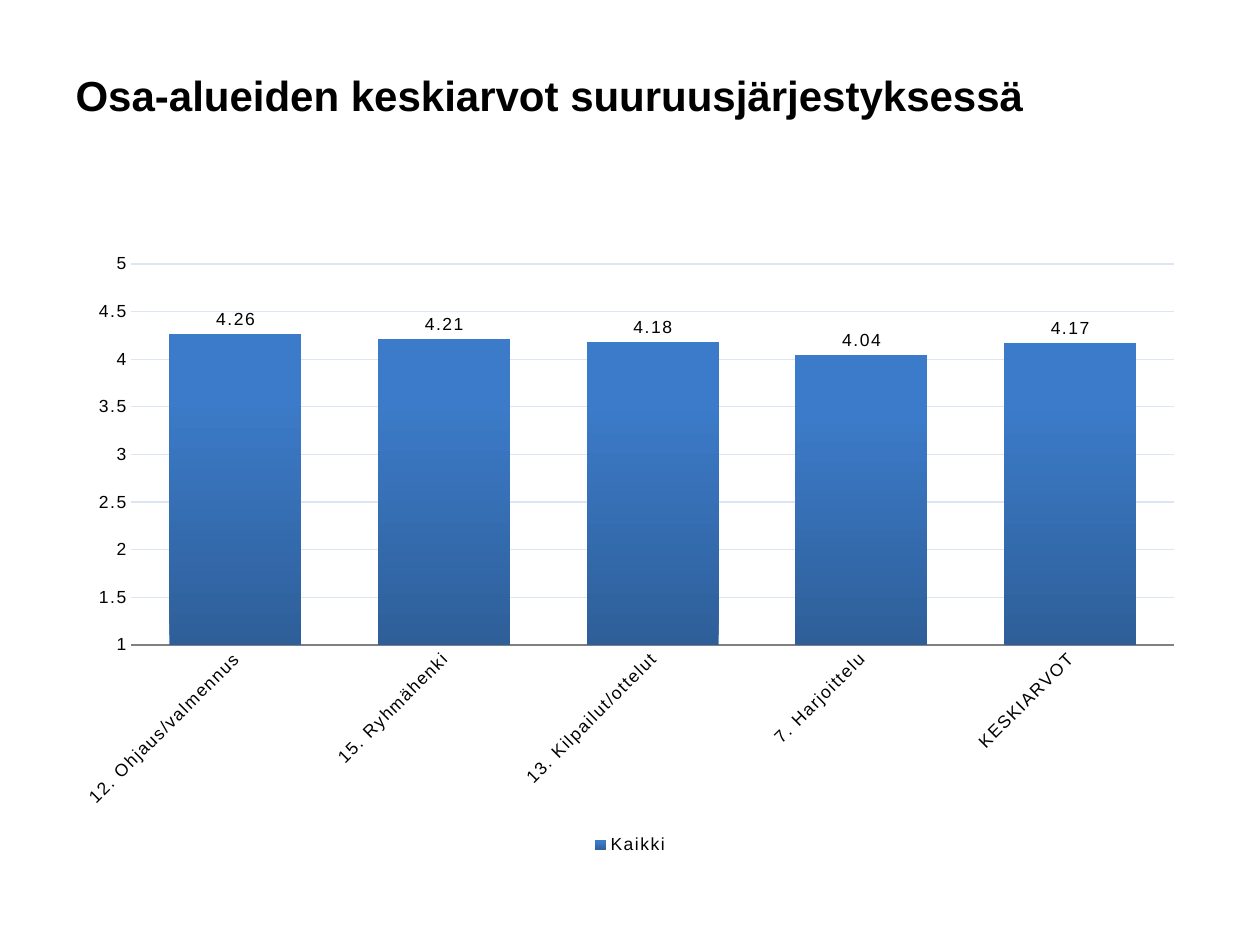
import dataclasses

import lxml.etree
import pptx
import pptx.chart.data
import pptx.dml.color
import pptx.enum.chart
import pptx.enum.text
import pptx.oxml
import pptx.oxml.ns
import pptx.util

BLACK = pptx.dml.color.RGBColor(0x00, 0x00, 0x00)
BAR_BOTTOM = pptx.dml.color.RGBColor(0x2E, 0x5F, 0x99)
BAR_TOP = pptx.dml.color.RGBColor(0x3C, 0x7B, 0xC9)
GRID = pptx.dml.color.RGBColor(0xDC, 0xE6, 0xF2)
BASELINE = pptx.dml.color.RGBColor(0x80, 0x80, 0x80)

SLIDE_WIDTH = pptx.util.Inches(10)
SLIDE_HEIGHT = pptx.util.Inches(7.5)
FONT = "Arial"


@dataclasses.dataclass(frozen=True)
class Area:
    """A rectangle in shares of its container."""
    left: float
    top: float
    width: float
    height: float

    def on_slide(self) -> tuple[int, int, int, int]:
        return (int(self.left * SLIDE_WIDTH), int(self.top * SLIDE_HEIGHT),
                int(self.width * SLIDE_WIDTH), int(self.height * SLIDE_HEIGHT))


@dataclasses.dataclass(frozen=True)
class Score:
    section: str
    average: float


TITLE_AREA = Area(0.05, 0.05, 0.9, 0.1)
CHART_AREA = Area(0.05, 0.26, 0.9, 0.65)
PLOT_AREA = Area(0.06, 0.03, 0.92, 0.62)

SCORES = (
    Score("12. Ohjaus/valmennus", 4.26),
    Score("15. Ryhmähenki", 4.21),
    Score("13. Kilpailut/ottelut", 4.18),
    Score("7. Harjoittelu", 4.04),
    Score("KESKIARVOT", 4.17),
)


def format_font(font, size: float, bold: bool = False) -> None:
    font.name = FONT
    font.size = pptx.util.Pt(size)
    font.bold = bold
    font.color.rgb = BLACK


def add_title(slide) -> None:
    title = slide.shapes.title
    title.left, title.top, title.width, title.height = TITLE_AREA.on_slide()
    frame = title.text_frame
    frame.text = "Osa-alueiden keskiarvot suuruusjärjestyksessä"
    frame.word_wrap = True
    frame.vertical_anchor = pptx.enum.text.MSO_ANCHOR.MIDDLE
    paragraph = frame.paragraphs[0]
    paragraph.alignment = pptx.enum.text.PP_ALIGN.LEFT
    format_font(paragraph.runs[0].font, 24, bold=True)


def place_plot(chart, area: Area) -> None:
    """Fix the inner plot area in shares of the chart."""
    qn = pptx.oxml.ns.qn
    plot_area = chart.plots[0]._element.getparent()
    for old in plot_area.findall(qn("c:layout")):
        plot_area.remove(old)
    layout = pptx.oxml.parse_xml(f"<c:layout {pptx.oxml.ns.nsdecls('c')}/>")
    plot_area.insert(0, layout)
    manual = lxml.etree.SubElement(layout, qn("c:manualLayout"))
    settings = (("layoutTarget", "inner"), ("xMode", "edge"), ("yMode", "edge"),
                ("x", area.left), ("y", area.top), ("w", area.width), ("h", area.height))
    for tag, value in settings:
        lxml.etree.SubElement(manual, qn(f"c:{tag}")).set("val", str(value))


def format_axes(chart) -> None:
    for axis in (chart.category_axis, chart.value_axis):
        axis.major_tick_mark = pptx.enum.chart.XL_TICK_MARK.NONE
        axis.minor_tick_mark = pptx.enum.chart.XL_TICK_MARK.NONE
        format_font(axis.tick_labels.font, 10)

    sections = chart.category_axis
    sections.format.line.color.rgb = BASELINE
    sections.format.line.width = pptx.util.Pt(1)
    labels_body = sections._element.find(".//" + pptx.oxml.ns.qn("a:bodyPr"))
    labels_body.set("rot", str(-45 * 60000))
    labels_body.set("vert", "horz")

    averages = chart.value_axis
    averages.minimum_scale, averages.maximum_scale = 1, 5
    averages.major_unit = 0.5
    averages.format.line.fill.background()
    averages.major_gridlines.format.line.color.rgb = GRID
    averages.major_gridlines.format.line.width = pptx.util.Pt(0.75)


def format_bars(chart) -> None:
    plot = chart.plots[0]
    plot.gap_width = 58
    plot.vary_by_categories = False
    bars = plot.series[0]
    bars.invert_if_negative = False
    fill = bars.format.fill
    fill.gradient()
    fill.gradient_angle = 90
    bottom, top = fill.gradient_stops
    bottom.color.rgb, top.color.rgb = BAR_BOTTOM, BAR_TOP
    top.position = 0.8
    bars.format.line.fill.background()

    labels = bars.data_labels
    labels.show_value = True
    labels.number_format = "0.00"
    labels.number_format_is_linked = False
    labels.position = pptx.enum.chart.XL_LABEL_POSITION.OUTSIDE_END
    format_font(labels.font, 10)


def add_score_chart(slide) -> None:
    data = pptx.chart.data.CategoryChartData()
    data.categories = [score.section for score in SCORES]
    data.add_series("Kaikki", [score.average for score in SCORES])
    chart = slide.shapes.add_chart(
        pptx.enum.chart.XL_CHART_TYPE.COLUMN_CLUSTERED, *CHART_AREA.on_slide(), data).chart
    chart.has_title = False
    format_font(chart.font, 10)
    chart.has_legend = True
    chart.legend.position = pptx.enum.chart.XL_LEGEND_POSITION.BOTTOM
    chart.legend.include_in_layout = False
    format_font(chart.legend.font, 10)
    format_axes(chart)
    format_bars(chart)
    place_plot(chart, PLOT_AREA)
    for properties in chart._chartSpace.iter(pptx.oxml.ns.qn("a:defRPr")):
        properties.set("spc", "100")


def main() -> None:
    deck = pptx.Presentation()
    deck.slide_width, deck.slide_height = SLIDE_WIDTH, SLIDE_HEIGHT
    slide = deck.slides.add_slide(deck.slide_layouts.get_by_name("Title Only"))
    add_title(slide)
    add_score_chart(slide)
    deck.save("out.pptx")


if __name__ == "__main__":
    main()
